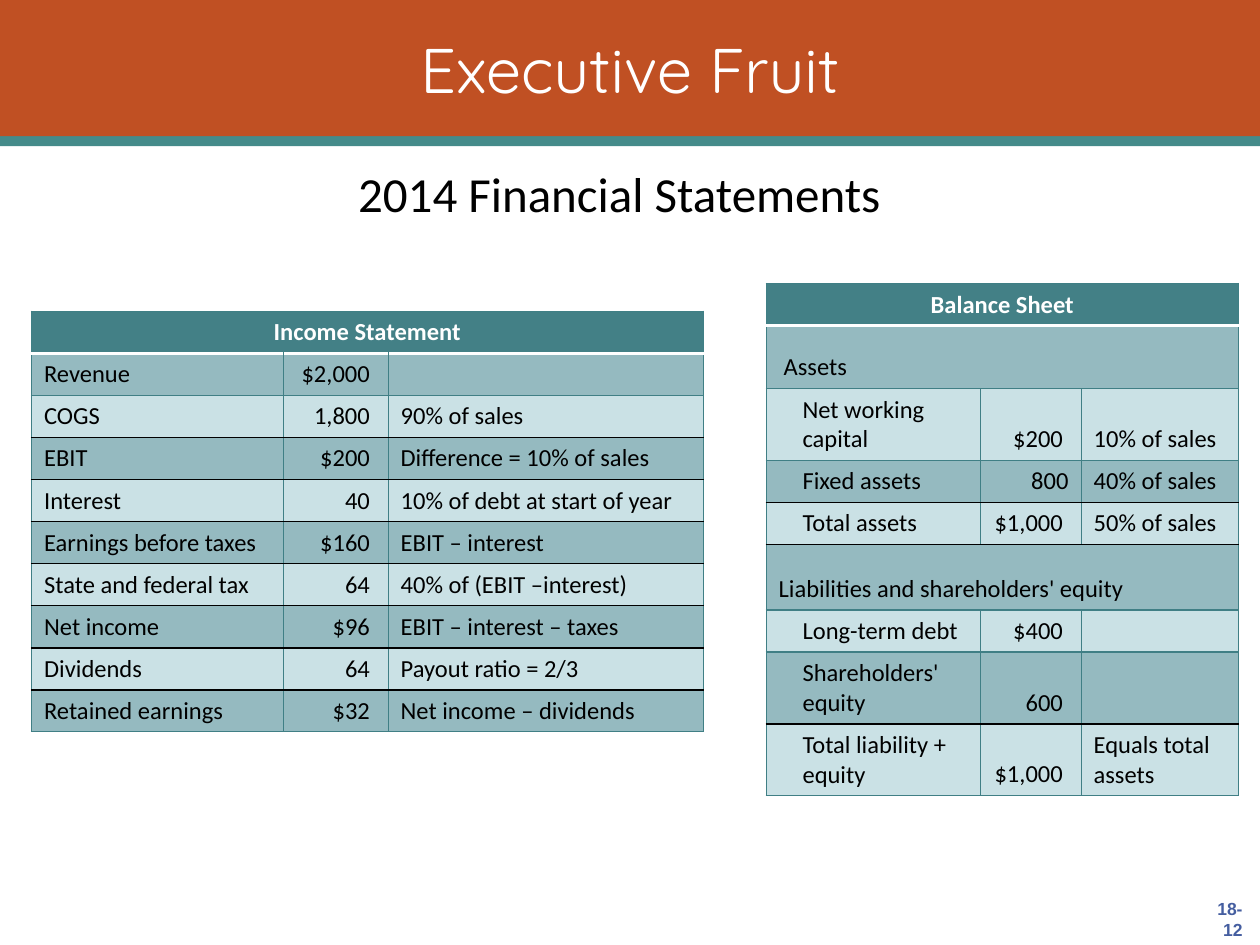
from lxml import etree
from pptx import Presentation
from pptx.dml.color import RGBColor
from pptx.enum.shapes import MSO_SHAPE
from pptx.enum.text import MSO_ANCHOR, PP_ALIGN
from pptx.oxml.ns import qn
from pptx.util import Inches, Pt

RECT = MSO_SHAPE.RECTANGLE
LEFT, MID, RIGHT = PP_ALIGN.LEFT, PP_ALIGN.CENTER, PP_ALIGN.RIGHT
TOP, CENTER, LOW = MSO_ANCHOR.TOP, MSO_ANCHOR.MIDDLE, MSO_ANCHOR.BOTTOM

WHITE = RGBColor(0xFF, 0xFF, 0xFF)
BLACK = RGBColor(0x00, 0x00, 0x00)
RUST = RGBColor(0xC0, 0x50, 0x23)
GREEN = RGBColor(0x45, 0x8B, 0x8A)
BLUE = RGBColor(0x45, 0x5E, 0xA0)
TEAL = RGBColor(0x43, 0x80, 0x86)
EDGE = RGBColor(0x40, 0x7F, 0x85)
DARK = RGBColor(0x95, 0xBA, 0xC0)
LIGHT = RGBColor(0xCA, 0xE1, 0xE5)

INCOME = [
    ("Income Statement",),
    ("Revenue", "$2,000 ", ""),
    ("COGS", "1,800 ", "90% of sales"),
    ("EBIT", "$200 ", "Difference = 10% of sales"),
    ("Interest", "40 ", "10% of debt at start of year"),
    ("Earnings before taxes", "$160 ", "EBIT – interest"),
    ("State and federal tax", "64 ", "40% of (EBIT –interest)"),
    ("Net income", "$96 ", "EBIT – interest – taxes"),
    ("Dividends", "64 ", "Payout ratio = 2/3"),
    ("Retained earnings", "$32 ", "Net income – dividends"),
]
BALANCE = [
    ("Balance Sheet",),
    ("Assets",),
    ("Net working capital", "$200 ", "10% of sales"),
    ("Fixed assets", "800", "40% of sales"),
    ("Total assets", "$1,000 ", "50% of sales"),
    ("Liabilities and shareholders' equity",),
    ("Long-term debt", "$400 ", ""),
    ("Shareholders' equity", "600 ", ""),
    ("Total liability + equity", "$1,000 ", "Equals total assets"),
]
ROW = 3.33 / 10


class Page:
    def __init__(self, slide, font="Calibri", size=14):
        self.slide, self.font, self.size = slide, font, size

    def bar(self, x, y, w, h, color):
        bar = self.slide.shapes.add_shape(
            RECT, Inches(x), Inches(y), Inches(w), Inches(h))
        bar.shadow.inherit = False
        bar.fill.solid()
        bar.fill.fore_color.rgb = color
        bar.line.fill.background()

    def style(self, para, align, color, size=None, font=None, bold=False):
        para.alignment = align
        for run in para.runs:
            run.font.name = font or self.font
            run.font.size = Pt(size or self.size)
            run.font.bold = bold
            run.font.color.rgb = color

    def text(self, x, y, w, h, words, align, color, size,
             font=None, bold=False, anchor=CENTER, wrap=True):
        box = self.slide.shapes.add_textbox(
            Inches(x), Inches(y), Inches(w), Inches(h))
        frame = box.text_frame
        frame.word_wrap = wrap
        frame.vertical_anchor = anchor
        frame.text = words
        self.style(frame.paragraphs[0], align, color, size, font, bold)

    def border(self, cell, side, color, width):
        line = etree.SubElement(
            cell._tc.get_or_add_tcPr(), qn("a:ln" + side), w=str(Pt(width)))
        fill = etree.SubElement(line, qn("a:solidFill"))
        etree.SubElement(fill, qn("a:srgbClr"), val=str(color))

    def cell(self, cell, words, head, align, fill, above, below):
        for side, line in zip("LRTB", ((EDGE, 0.75),) * 2 + (above, below)):
            self.border(cell, side, *line)
        cell.fill.solid()
        cell.fill.fore_color.rgb = fill
        cell.vertical_anchor = LOW
        cell.text = words
        para = cell.text_frame.paragraphs[0]
        self.style(para, align, WHITE if head else BLACK, bold=head)
        if not words:
            # An empty cell would otherwise grow to the default text size.
            end = para._p.get_or_add_endParaRPr()
            end.set("sz", str(self.size * 100))

    def table(self, x, y, cols, heights, data, rules, indents):
        """Draw a table; rules holds the rows with a black line below,
        indents the extra left margin of the first cell by row."""
        table = self.slide.shapes.add_table(
            len(data), len(cols), Inches(x), Inches(y),
            Inches(sum(cols)), Inches(sum(heights))).table
        for col, width in zip(table.columns, cols):
            col.width = Inches(width)
        below = (EDGE, 0.75)
        for r, words in enumerate(data):
            table.rows[r].height = Inches(heights[r])
            head, span = r == 0, len(words) == 1
            fill = TEAL if head else DARK if r % 2 else LIGHT
            above = below
            below = ((WHITE, 2) if head else
                     (BLACK, 1) if r in rules else (EDGE, 0.75))
            if span:
                table.cell(r, 0).merge(table.cell(r, len(cols) - 1))
                words += ("",) * (len(cols) - 1)
            for c, word in enumerate(words):
                align = MID if head else RIGHT if c == 1 else LEFT
                self.cell(table.cell(r, c), word, head, align,
                          fill, above, below)
            table.cell(r, 0).margin_left = Inches(0.1 + indents.get(r, 0))


def main():
    deck = Presentation()
    deck.slide_width, deck.slide_height = Inches(10), Inches(7.5)
    page = Page(deck.slides.add_slide(deck.slide_layouts[6]))

    page.bar(0, 1.08, 10, 0.08, GREEN)
    page.bar(0, 0, 10, 1.08, RUST)
    page.text(9.46, 7.08, 0.5, 0.42, "18- 12", RIGHT, BLUE, 10,
              "Arial", bold=True, wrap=False)
    page.text(0.75, 0.08, 8.5, 0.92, "Executive Fruit", MID, WHITE, 36,
              "Quicksand")
    page.text(1.5, 1.25, 6.83, 0.57, "2014 Financial Statements", MID,
              BLACK, 28, anchor=TOP)

    page.table(0.25, 2.47, (2, 0.83, 2.5), [ROW] * len(INCOME), INCOME,
               range(2, 9), {})
    tall = {1: 0.5, 2: 0.57, 5: 0.52, 7: 0.57, 8: 0.57}
    heights = [tall.get(r, ROW) for r in range(len(BALANCE))]
    indents = {r: 0.19 for r, row in enumerate(BALANCE) if len(row) > 1}
    indents[1] = 0.04
    page.table(6.08, 2.25, (1.7, 0.8, 1.25), heights, BALANCE,
               (3, 4, 7), indents)
    deck.save("out.pptx")


if __name__ == "__main__":
    main()
